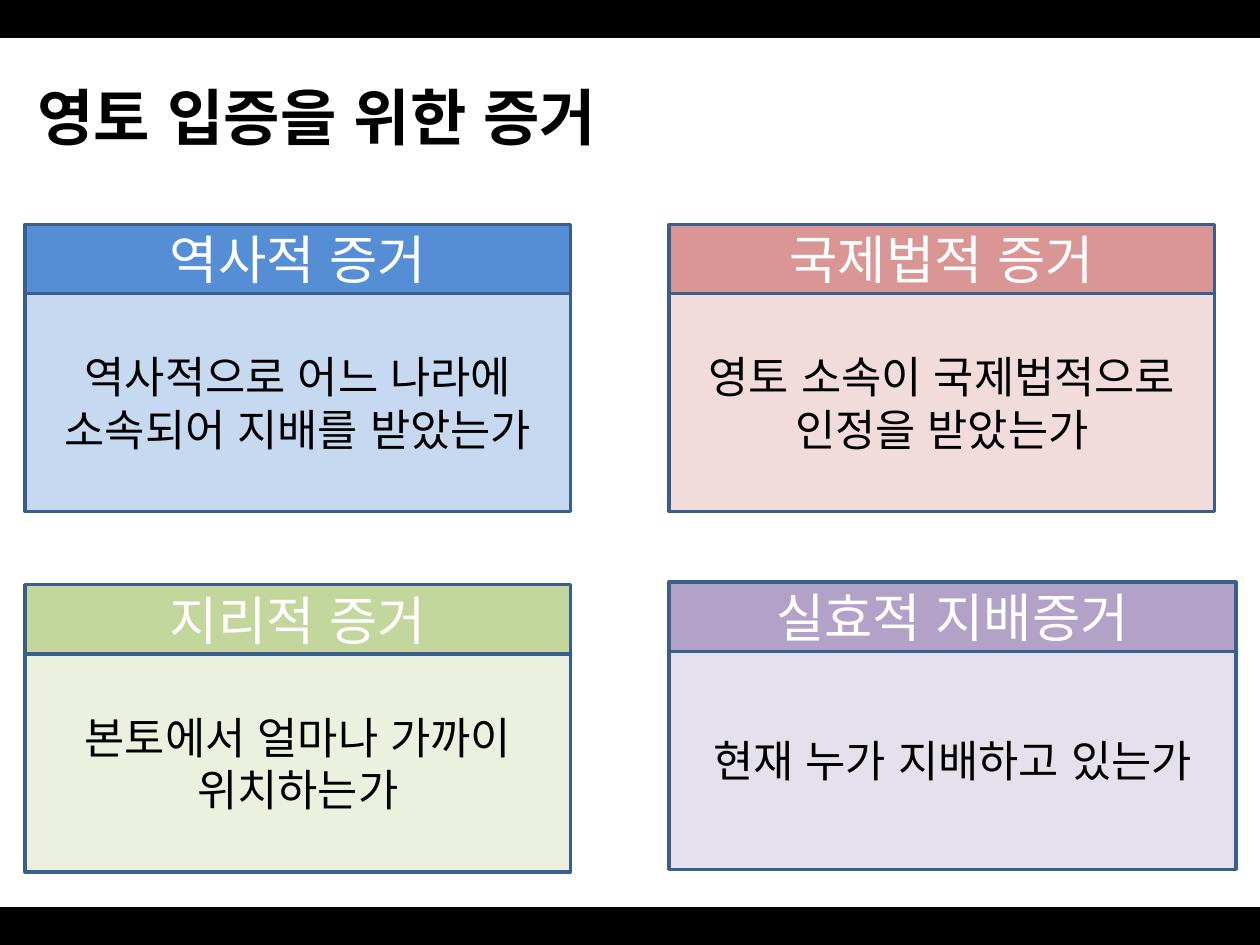
from dataclasses import dataclass

from lxml.etree import SubElement
from pptx import Presentation
from pptx.dml.color import RGBColor
from pptx.enum.lang import MSO_LANGUAGE_ID as LANG
from pptx.enum.shapes import MSO_SHAPE as SHAPE
from pptx.enum.text import MSO_ANCHOR as ANCHOR, MSO_AUTO_SIZE as AUTO, PP_ALIGN as ALIGN
from pptx.oxml.ns import qn
from pptx.util import Inches, Pt


@dataclass(frozen=True)
class Theme:
    font: str = "Noto Sans CJK KR"
    title_size: int = 35
    head_size: int = 30
    body_size: int = 25
    line_width: int = 2
    black: str = "000000"
    white: str = "FFFFFF"
    border: str = "3A5F8C"
    blue: tuple = ("558ED5", "C6D9F1")
    red: tuple = ("D99694", "F2DCDB")
    green: tuple = ("C3D69B", "EBF1DE")
    purple: tuple = ("B3A2C7", "E6E0EC")


THEME = Theme()
SLIDE_W, SLIDE_H = 10, 7.5
BAR_H = 0.29
HEAD_H, CARD_H = 0.55, 2.28
LEFT_X, RIGHT_X = 0.2, 5.31
CARD_W = 4.33

CARDS = [
    ((LEFT_X, 1.78, CARD_W, CARD_H), THEME.blue,
     "역사적 증거", "역사적으로 어느 나라에 소속되어 지배를 받았는가"),
    ((LEFT_X, 4.64, CARD_W, CARD_H), THEME.green,
     "지리적 증거", "본토에서 얼마나 가까이 위치하는가"),
    ((RIGHT_X, 4.62, 4.5, CARD_H), THEME.purple,
     "실효적 지배증거", "현재 누가 지배하고 있는가"),
    ((RIGHT_X, 1.78, CARD_W, CARD_H), THEME.red,
     "국제법적 증거", "영토 소속이 국제법적으로 인정을 받았는가"),
]


def add_run(p, text, size, color, bold=False):
    r = p.add_run()
    r.text = text
    font = r.font
    font.name = THEME.font
    font.size = Pt(size)
    font.bold = bold
    font.color.rgb = RGBColor.from_string(color)
    font.language_id = LANG.KOREAN
    SubElement(r._r.get_or_add_rPr(), qn("a:ea"), typeface=THEME.font)


def add_rect(shapes, box, fill, line):
    sp = shapes.add_shape(SHAPE.RECTANGLE, *map(Inches, box))
    sp.shadow.inherit = False
    sp.fill.solid()
    sp.fill.fore_color.rgb = RGBColor.from_string(fill)
    sp.line.color.rgb = RGBColor.from_string(line)
    sp.line.width = Pt(THEME.line_width)
    return sp


def add_panel(shapes, box, fill, text, size, color):
    tf = add_rect(shapes, box, fill, THEME.border).text_frame
    tf.word_wrap = True
    tf.vertical_anchor = ANCHOR.MIDDLE
    p = tf.paragraphs[0]
    p.alignment = ALIGN.CENTER
    add_run(p, text, size, color)


def add_title(s, box, text):
    tf = s.shapes.add_textbox(*map(Inches, box)).text_frame
    tf.word_wrap = False
    tf.auto_size = AUTO.SHAPE_TO_FIT_TEXT
    add_run(tf.paragraphs[0], text, THEME.title_size, THEME.black, bold=True)


def add_card(s, box, colors, head, body):
    x, y, w, h = box
    head_fill, body_fill = colors
    shapes = s.shapes.add_group_shape().shapes
    add_panel(shapes, (x, y, w, HEAD_H), head_fill, head, THEME.head_size, THEME.white)
    add_panel(shapes, (x, y + HEAD_H, w, h - HEAD_H), body_fill, body,
              THEME.body_size, THEME.black)


def main():
    prs = Presentation()
    prs.slide_width, prs.slide_height = Inches(SLIDE_W), Inches(SLIDE_H)
    s = prs.slides.add_slide(prs.slide_layouts[6])
    for y in (SLIDE_H - BAR_H, 0):
        add_rect(s.shapes, (0, y, SLIDE_W, BAR_H), THEME.black, THEME.black)
    add_title(s, (0.2, 0.58, 5.14, 0.69), "영토 입증을 위한 증거")
    for card in CARDS:
        add_card(s, *card)
    prs.save("out.pptx")


if __name__ == "__main__":
    main()
